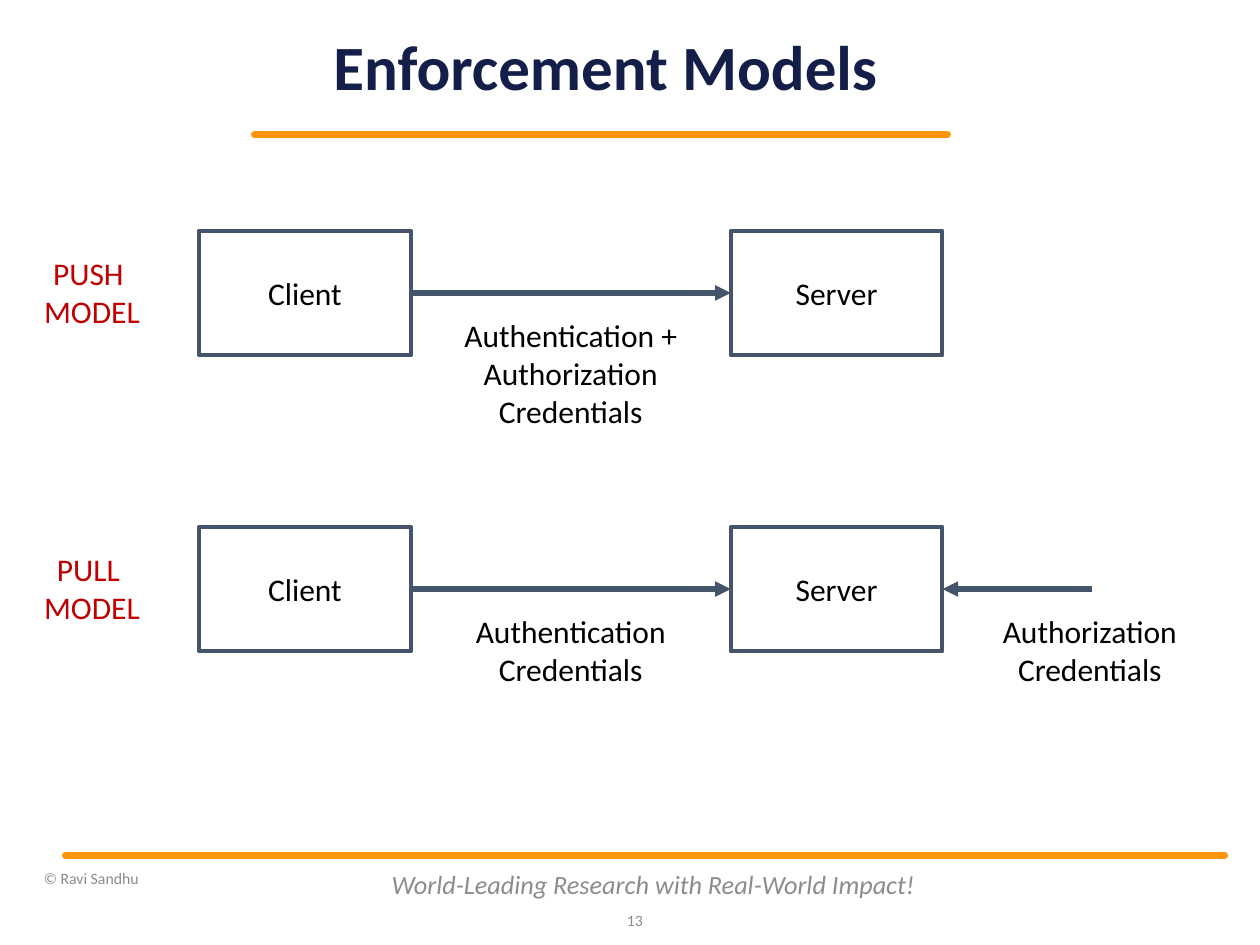
from lxml.etree import SubElement
from pptx import Presentation
from pptx.dml.color import RGBColor
from pptx.enum.shapes import MSO_CONNECTOR as CONNECTOR, MSO_SHAPE as SHAPE
from pptx.enum.text import MSO_ANCHOR as ANCHOR, PP_ALIGN as ALIGN
from pptx.oxml.ns import qn
from pptx.util import Inches, Pt

FONT = "Calibri"
NAVY = RGBColor(0x13, 0x1F, 0x49)
ORANGE = RGBColor(0xFF, 0x95, 0x0E)
SLATE = RGBColor(0x44, 0x54, 0x6A)
RED = RGBColor(0xC0, 0x00, 0x00)
GRAY = RGBColor(0x8C, 0x8C, 0x8C)
BLACK = RGBColor(0, 0, 0)

RULES = [(2.02, 7.52, 1.07), (0.52, 9.72, 6.79)]
FOOTERS = [
    ("World-Leading Research with Real-World Impact!", (3, 6.82, 4.37, 0.4), 15, ALIGN.CENTER, True),
    ("13", (4.8, 7.1, 0.4, 0.4), 9, ALIGN.RIGHT, False),
    ("© Ravi Sandhu", (0.25, 6.79, 2.75, 0.36), 9, ALIGN.LEFT, False),
]
MODELS = [
    {"top": 1.83, "name": ["PUSH ", "MODEL"],
     "sent": ["Authentication +", "Authorization", "Credentials"], "fetched": None},
    {"top": 4.18, "name": ["PULL ", "MODEL"],
     "sent": ["Authentication", "Credentials"], "fetched": ["Authorization", "Credentials"]},
]
CLIENT_X, SERVER_X = 1.58, 5.8
BOX_W, BOX_H = 1.68, 0.99
LINE_H = 0.3
NAME_X, SENT_X, FETCHED_X = 0.73, 4.53, 8.65
FETCH_START = 8.67


def write(shape, lines, size, color, align=ALIGN.CENTER, anchor=ANCHOR.MIDDLE,
          bold=False, italic=False, wrap=True):
    tf = shape.text_frame
    tf.word_wrap = wrap
    tf.vertical_anchor = anchor
    for i, line in enumerate(lines):
        p = tf.paragraphs[0] if i == 0 else tf.add_paragraph()
        p.add_run().text = line
        p.alignment = align
        p.font.name, p.font.size = FONT, Pt(size)
        p.font.bold, p.font.italic = bold, italic
        p.font.color.rgb = color
    return tf


def add_text(s, lines, box, *args, **kwargs):
    return write(s.shapes.add_textbox(*map(Inches, box)), lines, *args, **kwargs)


def add_label(s, lines, center, top, width, color=BLACK):
    box = (center - width / 2, top, width, 0.1 + LINE_H * len(lines))
    add_text(s, lines, box, 18, color, anchor=ANCHOR.TOP, wrap=False)


def add_line(s, x1, x2, y, color, width):
    line = s.shapes.add_connector(CONNECTOR.STRAIGHT, Inches(x1), Inches(y), Inches(x2), Inches(y))
    line.line.color.rgb = color
    line.line.width = Pt(width)
    SubElement(line._element.spPr, qn("a:effectLst"))
    return line


def add_arrow(s, x1, x2, y):
    arrow = add_line(s, x1, x2, y, SLATE, 3)
    SubElement(arrow.line._get_or_add_ln(), qn("a:tailEnd"), type="triangle")
    return arrow


def add_box(s, text, x, y):
    box = s.shapes.add_shape(SHAPE.RECTANGLE, Inches(x), Inches(y), Inches(BOX_W), Inches(BOX_H))
    box.shadow.inherit = False
    box.fill.background()
    box.line.color.rgb = SLATE
    box.line.width = Pt(2.25)
    write(box, [text], 18, BLACK)
    return box


def add_model(s, model):
    top = model["top"]
    middle = top + BOX_H / 2
    label_top = top + 0.63
    client = add_box(s, "Client", CLIENT_X, top)
    server = add_box(s, "Server", SERVER_X, top)
    arrow = add_arrow(s, CLIENT_X + BOX_W, SERVER_X, middle)
    arrow.begin_connect(client, 3)
    arrow.end_connect(server, 1)
    add_label(s, model["name"], NAME_X, top + 0.14, 0.97, RED)
    add_label(s, model["sent"], SENT_X, label_top, 1.9)
    if model["fetched"]:
        add_arrow(s, FETCH_START, SERVER_X + BOX_W, middle).end_connect(server, 3)
        add_label(s, model["fetched"], FETCHED_X, label_top, 1.6)


def main():
    prs = Presentation()
    prs.slide_width, prs.slide_height = Inches(10), Inches(7.5)
    s = prs.slides.add_slide(prs.slide_layouts[6])

    for x1, x2, y in RULES:
        rule = add_line(s, x1, x2, y, ORANGE, 4)
        rule.line._get_or_add_ln().set("cap", "rnd")
    for text, box, size, align, italic in FOOTERS:
        add_text(s, [text], box, size, GRAY, align, italic=italic)

    tf = add_text(s, ["Enforcement Models"], (2.18, 0.3, 5.25, 0.51), 36, NAVY, bold=True)
    tf.margin_left = tf.margin_right = tf.margin_top = tf.margin_bottom = 0
    tf.paragraphs[0].line_spacing = 0.9

    for model in MODELS:
        add_model(s, model)
    prs.save("out.pptx")


if __name__ == "__main__":
    main()
